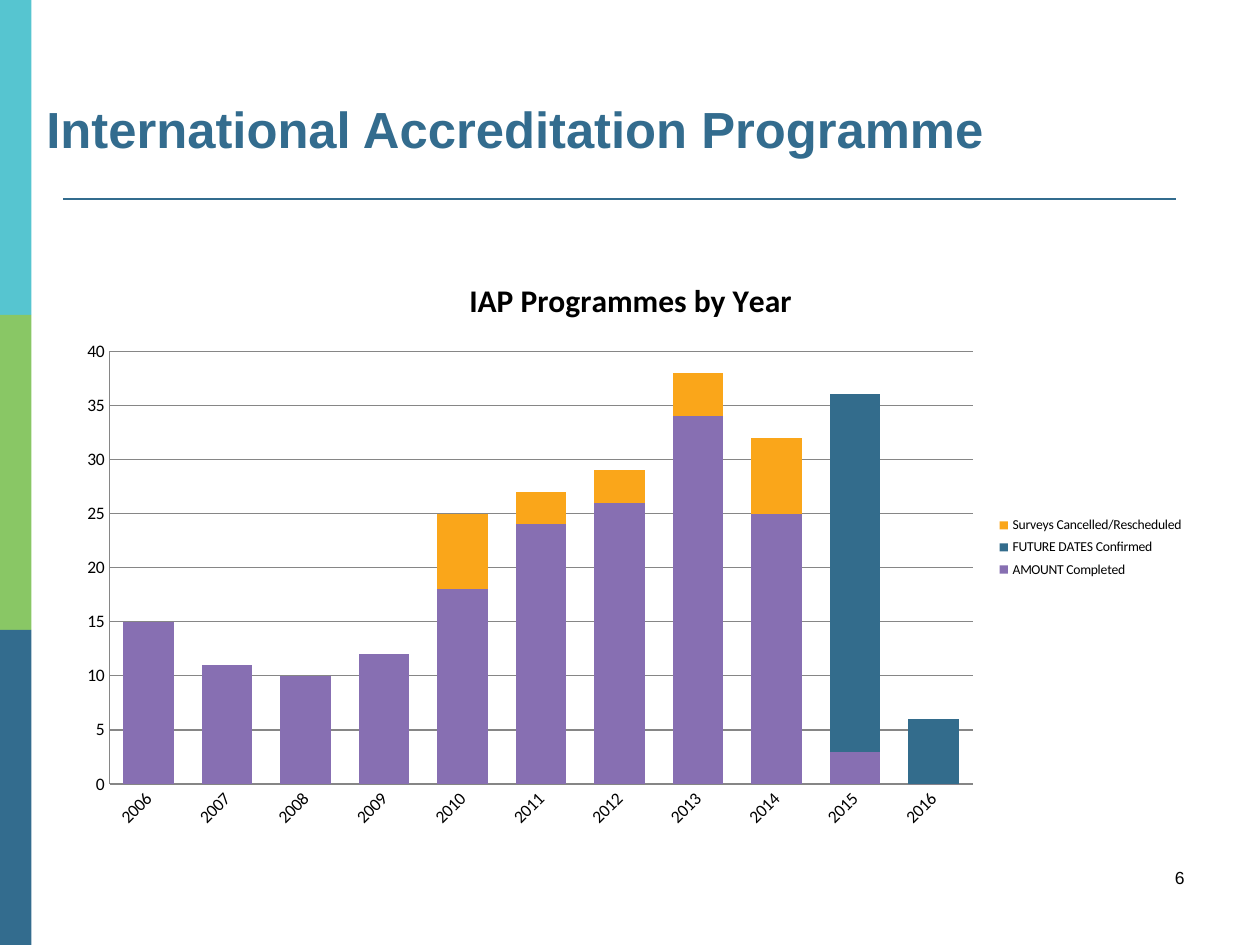
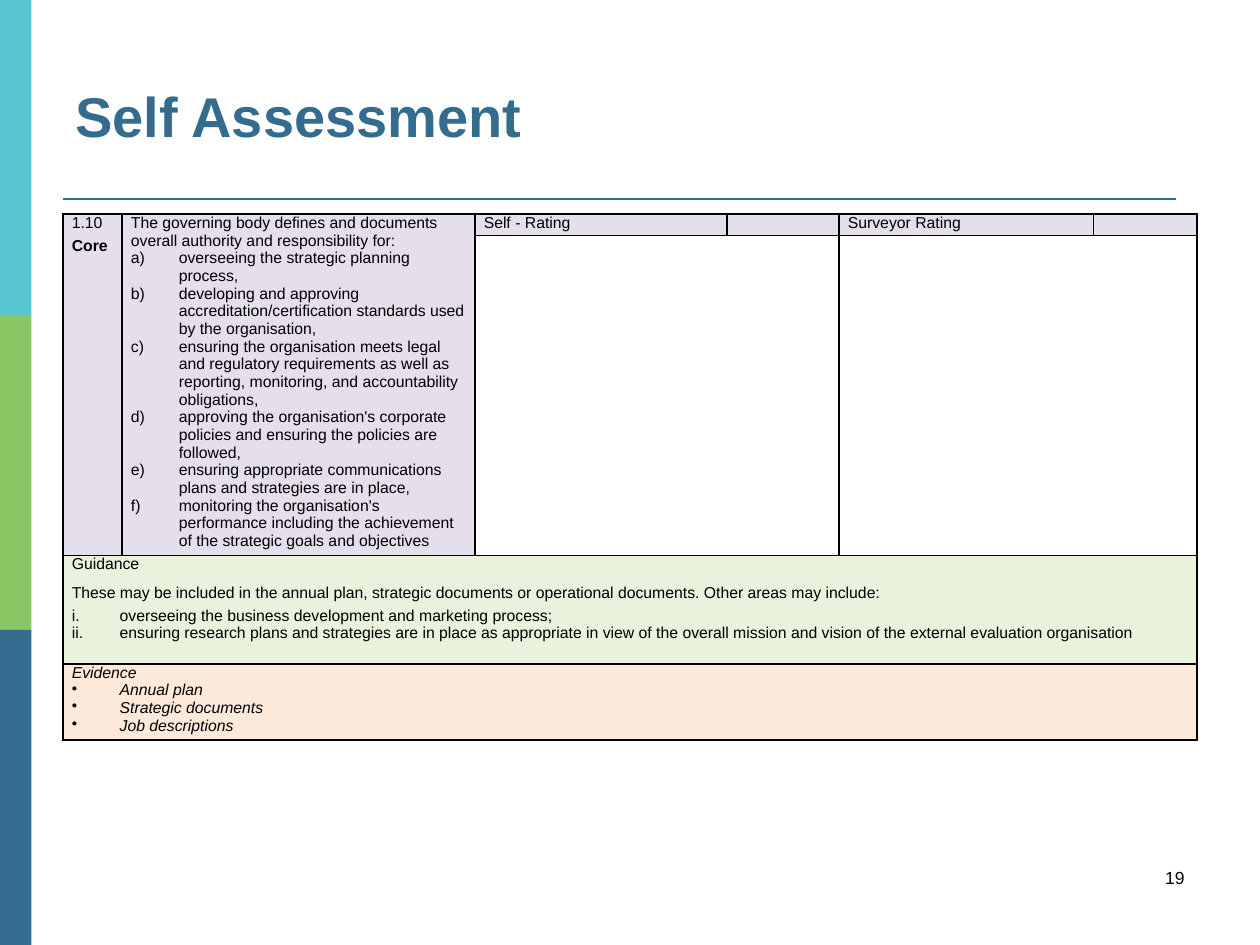
from lxml import etree
from pptx import Presentation
from pptx.chart.data import CategoryChartData as ChartData
from pptx.dml.color import RGBColor as RGB
from pptx.enum.chart import XL_CHART_TYPE as KIND, XL_LEGEND_POSITION as SPOT, XL_TICK_MARK as TICK
from pptx.enum.shapes import MSO_CONNECTOR as LINK, MSO_SHAPE as SHAPE
from pptx.enum.text import MSO_ANCHOR as ANCHOR, PP_ALIGN as ALIGN
from pptx.oxml import parse_xml
from pptx.oxml.ns import nsdecls, qn
from pptx.util import Inches, Pt

TEAL = RGB(0x56, 0xC5, 0xD0)
GREEN = RGB(0x89, 0xC7, 0x65)
BLUE = RGB(0x33, 0x6C, 0x8E)
BLACK = RGB(0, 0, 0)
GREY = RGB(0x86, 0x86, 0x86)
PURPLE = RGB(0x87, 0x6F, 0xB2)
NAVY = RGB(0x33, 0x6C, 0x8C)
AMBER = RGB(0xFA, 0xA6, 0x1A)
LILAC = RGB(0xE5, 0xDF, 0xEC)
MINT = RGB(0xEA, 0xF1, 0xDD)
PEACH = RGB(0xFD, 0xE9, 0xD9)


def style(font, size, color=BLACK, bold=False, name="Arial"):
    font.name, font.size, font.bold = name, Pt(size), bold
    font.color.rgb = color


def start(deck, title, box, size, page):
    slide = deck.slides.add_slide(deck.slide_layouts[6])
    for i, color in enumerate((TEAL, GREEN, BLUE)):
        band = slide.shapes.add_shape(SHAPE.RECTANGLE, 0, Inches(2.5 * i), Inches(0.25), Inches(2.5))
        band.shadow.inherit = False
        band.fill.solid()
        band.fill.fore_color.rgb = color
        band.line.fill.background()
    rule = slide.shapes.add_connector(LINK.STRAIGHT, Inches(0.5), Inches(1.58), Inches(9.33), Inches(1.58))
    rule.line.color.rgb = BLUE
    rule.line.width = Pt(1.5)
    etree.SubElement(rule._element.spPr, qn("a:effectLst"))
    head = slide.shapes.add_textbox(*map(Inches, box)).text_frame
    head.word_wrap = True
    head.vertical_anchor = ANCHOR.BOTTOM
    head.text = title
    style(head.paragraphs[0].font, size, BLUE, True)
    foot = slide.shapes.add_textbox(Inches(7.17), Inches(6.83), Inches(2.33), Inches(0.5)).text_frame
    foot.word_wrap = True
    foot.text = page
    foot.paragraphs[0].alignment = ALIGN.RIGHT
    style(foot.paragraphs[0].font, 10)
    return slide


deck = Presentation()
deck.slide_width, deck.slide_height = Inches(10), Inches(7.5)

slide = start(deck, "International Accreditation Programme", (0.27, 0.36, 7.95, 0.95), 29, "6")
data = ChartData()
data.categories = [str(year) for year in range(2006, 2017)]
data.add_series("AMOUNT Completed", (15, 11, 10, 12, 18, 24, 26, 34, 25, 3, 0))
data.add_series("FUTURE DATES Confirmed", (None,) * 5 + (0, 0, 0, 0, 33, 6))
data.add_series("Surveys Cancelled/Rescheduled", (None,) * 4 + (7, 3, 3, 4, 7, 0, None))
chart = slide.shapes.add_chart(
    KIND.COLUMN_STACKED, Inches(0.51), Inches(2.02), Inches(8.99), Inches(4.65), data).chart
style(chart.font, 10, name="Calibri")
chart.has_title = True
chart.chart_title.text_frame.text = "IAP Programmes by Year"
style(chart.chart_title.text_frame.paragraphs[0].font, 18, bold=True, name="Calibri")
chart.has_legend = True
chart.legend.position = SPOT.RIGHT
chart.legend.include_in_layout = False
style(chart.legend.font, 7.8, name="Calibri")
plot = chart.plots[0]
plot.gap_width, plot.overlap, plot.vary_by_categories = 55, 100, False
for bar, color in zip(plot.series, (PURPLE, NAVY, AMBER)):
    bar.format.fill.solid()
    bar.format.fill.fore_color.rgb = color
years, count = chart.category_axis, chart.value_axis
count.minimum_scale, count.maximum_scale, count.major_unit = 0, 40, 5
for axis in (years, count):
    axis.major_tick_mark = axis.minor_tick_mark = TICK.NONE
    style(axis.tick_labels.font, 10, name="Calibri")
for line in (years.format.line, count.format.line, count.major_gridlines.format.line):
    line.color.rgb = GREY
    line.width = Pt(0.75)
years._element.txPr.find(qn("a:bodyPr")).set("rot", "-2700000")
parts = (("x", 0.04), ("y", 0.165), ("w", 0.762), ("h", 0.739))
inner = '<c:layoutTarget val="inner"/><c:xMode val="edge"/><c:yMode val="edge"/>'
inner += "".join(f'<c:{key} val="{val}"/>' for key, val in parts)
area = chart._chartSpace.chart.plotArea
area.insert(0, parse_xml(
    f'<c:layout {nsdecls("c")}><c:manualLayout>{inner}</c:manualLayout></c:layout>'))

slide = start(deck, "Self Assessment", (0.5, 0.3, 7.33, 0.93), 32, "19")
ALPHA = ("a:buAutoNum", "type", "alphaLcParenR")
ROMAN = ("a:buAutoNum", "type", "romanLcPeriod")
DOT = ("a:buChar", "char", "•")
duties = (
    "overseeing the strategic planning process,",
    "developing and approving accreditation/certification standards used by the organisation,",
    "ensuring the organisation meets legal and regulatory requirements as well as reporting, "
    "monitoring, and accountability obligations,",
    "approving the organisation's corporate policies and ensuring the policies are followed,",
    "ensuring appropriate communications plans and strategies are in place,",
    "monitoring the organisation's performance including the achievement of the strategic goals "
    "and objectives",
)
areas = (
    "overseeing the business development and marketing process;",
    "ensuring research plans and strategies are in place as appropriate in view of the overall "
    "mission and vision of the external evaluation organisation",
)
proofs = ("Annual plan", "Strategic documents", "Job descriptions")
duty = "The governing body defines and documents overall authority and responsibility for:"
plan = ("These may be included in the annual plan, strategic documents or operational documents. "
        "Other areas may include:")

core = {
    (0, 0): (LILAC, [("1.10", None, 0, 0), ("Core", None, 3, 0)]),
    (0, 1): (LILAC, [(duty, None, 0, 0)] + [(text, ALPHA, 0, 0) for text in duties]),
    (0, 2): (LILAC, [("Self - Rating", None, 0, 0)]),
    (0, 3): (LILAC, []),
    (0, 4): (LILAC, [("Surveyor Rating", None, 0, 0)]),
    (0, 5): (LILAC, []),
}
guide = {
    (0, 0): (MINT, [("Guidance", None, 0, 3), (plan, None, 3, 3)]
             + [(text, ROMAN, 0, 0) for text in areas]),
    (1, 0): (PEACH, [("Evidence", None, 0, 0)] + [(text, DOT, 0, 0) for text in proofs]),
}
grids = (
    (1.7, (0.47, 2.8, 2, 0.89, 2.02, 0.82), (0.17, 2.54), core,
     ((0, 0, 1, 0), (0, 1, 1, 1), (1, 2, 1, 3), (1, 4, 1, 5))),
    (4.41, (9,), (0.86, 0.57), guide, ()),
)
for top, cols, rows, cells, spans in grids:
    table = slide.shapes.add_table(
        len(rows), len(cols), Inches(0.5), Inches(top), Inches(9), Inches(sum(rows))).table
    table.first_row = table.horz_banding = False
    for col, width in zip(table.columns, cols):
        col.width = Inches(width)
    for row, height in zip(table.rows, rows):
        row.height = Inches(height)
    for r in range(len(rows)):
        for c in range(len(cols)):
            cell = table.cell(r, c)
            fill, items = cells.get((r, c), (None, []))
            cell.margin_left = cell.margin_right = Inches(0.07)
            cell.margin_top = cell.margin_bottom = 0
            for side in "LRTB":
                cell._tc.get_or_add_tcPr().append(parse_xml(
                    f'<a:ln{side} {nsdecls("a")} w="12700"><a:solidFill>'
                    f'<a:srgbClr val="{BLACK}"/></a:solidFill></a:ln{side}>'))
            if fill:
                cell.fill.solid()
                cell.fill.fore_color.rgb = fill
            else:
                cell.fill.background()
            frame = cell.text_frame
            if not items:
                frame.paragraphs[0]._p.get_or_add_endParaRPr().set("sz", "900")
            for i, (text, mark, before, after) in enumerate(items):
                para = frame.add_paragraph() if i else frame.paragraphs[0]
                para.text = text
                if mark:
                    tag, key, val = mark
                    props = para._p.get_or_add_pPr()
                    props.set("marL", str(Inches(0.38)))
                    props.set("indent", str(-Inches(0.38)))
                    etree.SubElement(props, qn(tag)).set(key, val)
                para.space_before, para.space_after = Pt(before), Pt(after)
                style(para.font, 9, bold=text == "Core")
                para.font.italic = fill == PEACH
    for r, c, low, right in spans:
        table.cell(r, c).merge(table.cell(low, right))

deck.save("out.pptx")
